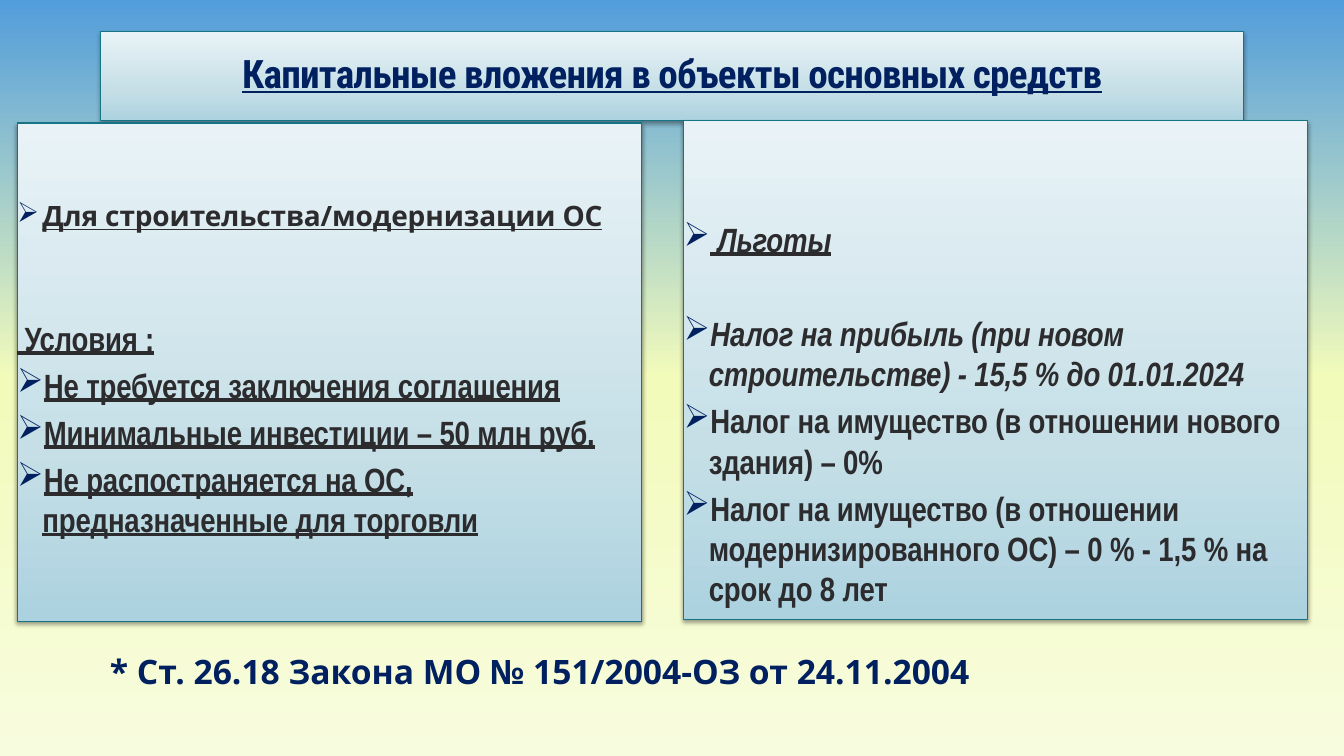
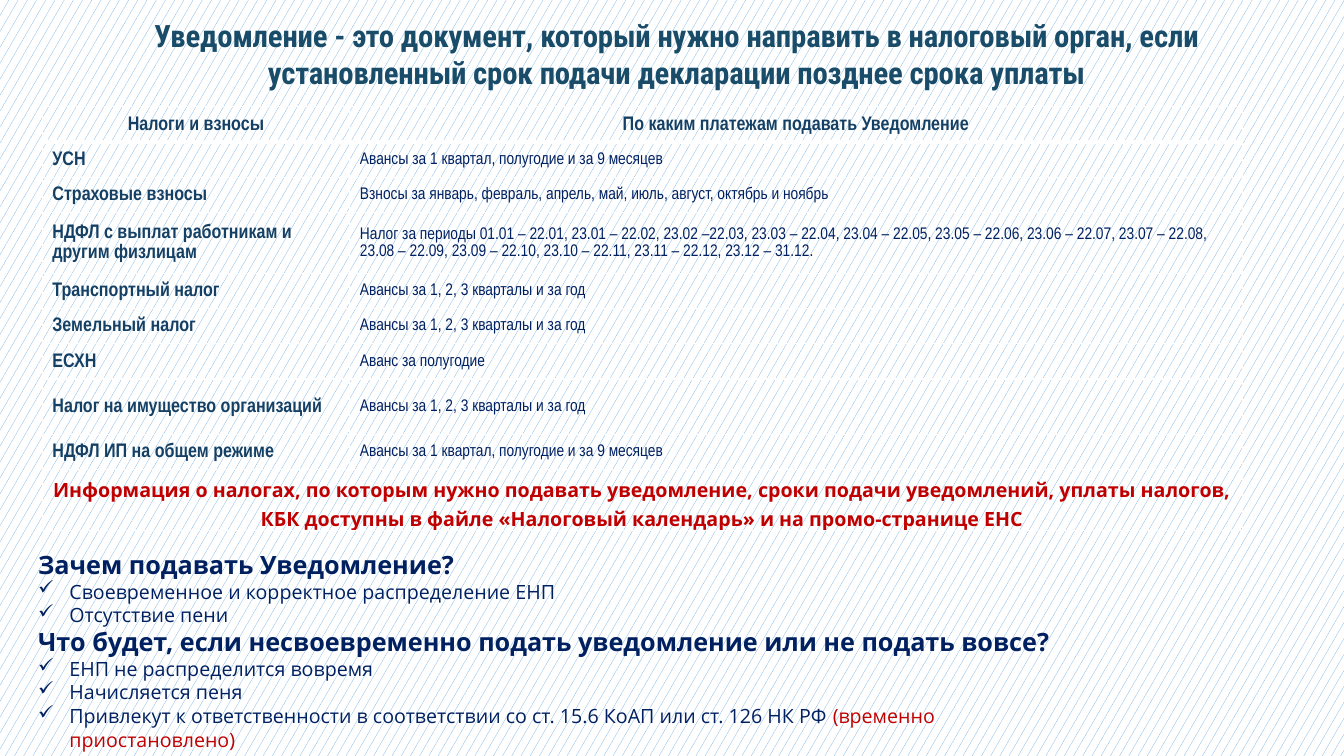
from dataclasses import dataclass, replace

import pptx
import pptx.dml.color
import pptx.enum.dml
import pptx.enum.shapes
import pptx.enum.text
import pptx.oxml.ns
import pptx.oxml.xmlchemy
import pptx.util
from pptx.util import Inches

NAVY, RED, CHARCOAL = "002060", "C00000", "2C2B2D"
TEAL, HEADING, LABEL, WHITE, SKY = "167485", "194C69", "154064", "FFFFFF", "529DDB"
NARROW, SANS, TITLE_FONT = "Arial Narrow", "Open Sans", "Roboto Condensed"
PANEL_STOPS = [(0, "ACD2DF"), (35, "C6DFE7"), (100, "E9F3F7")]
SKY_STOPS = [(0, SKY), (50, "F2FBBA"), (100, "F8FCDE")]
CENTER = pptx.enum.text.PP_ALIGN.CENTER
LEFT = pptx.enum.text.PP_ALIGN.LEFT
MIDDLE = pptx.enum.text.MSO_ANCHOR.MIDDLE
TOP = pptx.enum.text.MSO_ANCHOR.TOP


@dataclass(frozen=True)
class TextStyle:
    size: float
    font: str
    color: str
    bold: bool = False
    italic: bool = False
    underline: bool = False
    tracking: float = 0


@dataclass(frozen=True)
class Layout:
    """Paragraph settings: spacing in points, indent in inches."""
    align: int = LEFT
    before: float = 0
    line: float = 1
    bullet: str = ""
    indent: float = 0
    bullet_color: str = NAVY


PANEL_TITLE = TextStyle(28, TITLE_FONT, NAVY, True, underline=True, tracking=-0.5)
CONDITION = TextStyle(24, NARROW, CHARCOAL, True, underline=True, tracking=-0.1)
BENEFIT = replace(CONDITION, underline=False)
QUESTION = TextStyle(18, SANS, NAVY, True)
ANSWER = TextStyle(14, SANS, NAVY)
ROW_LABEL = TextStyle(14, NARROW, LABEL, True)
ROW_TEXT = TextStyle(12, NARROW, NAVY)
CALLOUT = TextStyle(14, SANS, RED, True)

ARROW_ITEM = Layout(before=4.8, bullet="➢", indent=0.25)
CHECK_ITEM = Layout(bullet="✓", indent=0.31)
CENTERED = Layout(CENTER)

QUARTERS = "Авансы за 1, 2, 3 кварталы и за год"
HALF_YEAR = "Авансы за 1 квартал, полугодие и за 9 месяцев"
PAYMENTS = [
    ("Налоги и взносы", "По каким платежам подавать Уведомление"),
    ("УСН", HALF_YEAR),
    ("Страховые взносы",
     "Взносы за январь, февраль, апрель, май, июль, август, октябрь и ноябрь"),
    ("НДФЛ с выплат работникам и другим физлицам",
     "Налог за периоды 01.01 – 22.01, 23.01 – 22.02, 23.02 –22.03, "
     "23.03 – 22.04, 23.04 – 22.05, 23.05 – 22.06, 23.06 – 22.07, "
     "23.07 – 22.08, 23.08 – 22.09, 23.09 – 22.10, 23.10 – 22.11, "
     "23.11 – 22.12, 23.12 – 31.12."),
    ("Транспортный налог", QUARTERS),
    ("Земельный налог", QUARTERS),
    ("ЕСХН", "Аванс за полугодие"),
    ("Налог на имущество организаций", QUARTERS),
    ("НДФЛ ИП на общем режиме", HALF_YEAR),
]
CALENDAR_NOTE = (
    "Информация о налогах, по которым нужно подавать уведомление, сроки подачи "
    "уведомлений, уплаты налогов, КБК доступны в файле «Налоговый календарь» "
    "и на промо-странице ЕНС")


def rgb(color):
    return pptx.dml.color.RGBColor.from_string(color)


def add_child(parent, tag, **attributes):
    child = parent.makeelement(pptx.oxml.ns.qn(tag), {})
    for name, value in attributes.items():
        child.set(name, str(value))
    parent.append(child)
    return child


def add_color(parent, color):
    return add_child(parent, "a:srgbClr", val=color)


def set_gradient(fill, owner, stops, angle):
    """Fill with any number of stops; owner is the XML element holding the fill."""
    fill.gradient()
    gradient = owner.find(".//" + pptx.oxml.ns.qn("a:gradFill"))
    for child in list(gradient):
        gradient.remove(child)
    stop_list = add_child(gradient, "a:gsLst")
    for position, color in stops:
        add_color(add_child(stop_list, "a:gs", pos=position * 1000), color)
    add_child(gradient, "a:lin", ang=angle * 60000, scaled=0)


def add_run(paragraph, text, style):
    run = paragraph.add_run()
    run.text = text
    font = run.font
    font.size, font.name = pptx.util.Pt(style.size), style.font
    font.bold, font.italic, font.underline = style.bold, style.italic, style.underline
    font.color.rgb = rgb(style.color)
    if style.tracking:
        run._r.get_or_add_rPr().set("spc", str(round(style.tracking * 100)))


def format_paragraph(paragraph, layout):
    paragraph.alignment = layout.align
    paragraph.space_before = pptx.util.Pt(layout.before)
    paragraph.line_spacing = layout.line
    if layout.bullet:
        properties = paragraph._p.get_or_add_pPr()
        properties.set("marL", str(Inches(layout.indent)))
        properties.set("indent", str(-Inches(layout.indent)))
        add_color(add_child(properties, "a:buClr"), layout.bullet_color)
        add_child(properties, "a:buChar", char=layout.bullet)


def write_text(frame, paragraphs):
    """Write paragraphs given as (layout, [(text, style), ...])."""
    for index, (layout, runs) in enumerate(paragraphs):
        paragraph = frame.add_paragraph() if index else frame.paragraphs[0]
        format_paragraph(paragraph, layout)
        for text, style in runs:
            add_run(paragraph, text, style)


def set_frame(frame, anchor, sides=0, top=0, bottom=0):
    frame.word_wrap = True
    frame.vertical_anchor = anchor
    frame.margin_left = frame.margin_right = Inches(sides)
    frame.margin_top, frame.margin_bottom = Inches(top), Inches(bottom)


def add_text(slide, box, paragraphs, anchor=TOP, sides=0.1, top=0.05):
    shape = slide.shapes.add_textbox(*map(Inches, box))
    set_frame(shape.text_frame, anchor, sides, top, top)
    write_text(shape.text_frame, paragraphs)


def add_panel(slide, box, paragraphs, anchor=TOP, top=0):
    """Add a gradient rectangle with a soft shadow."""
    shape = slide.shapes.add_shape(
        pptx.enum.shapes.MSO_SHAPE.RECTANGLE, *map(Inches, box))
    properties = shape._element.spPr
    set_gradient(shape.fill, properties, PANEL_STOPS, 270)
    shape.line.color.rgb = rgb(TEAL)
    shape.line.width = pptx.util.Pt(0.75)
    shape.shadow.inherit = False
    effects = properties.find(pptx.oxml.ns.qn("a:effectLst"))
    shadow = add_child(effects, "a:outerShdw", blurRad=pptx.util.Pt(3.1),
                       dist=pptx.util.Pt(1.6), dir=90 * 60000, rotWithShape=0)
    add_child(add_color(shadow, "000000"), "a:alpha", val=38000)
    set_frame(shape.text_frame, anchor, top=top)
    write_text(shape.text_frame, paragraphs)


def set_borders(cell, row):
    """White grid with a heavier rule under the header."""
    heavy = {(0, "B"), (1, "T")}
    properties = cell._tc.get_or_add_tcPr()
    for side in "LRTB":
        width = 3 if (row, side) in heavy else 1
        line = add_child(properties, "a:ln" + side, w=pptx.util.Pt(width))
        add_color(add_child(line, "a:solidFill"), WHITE)


def fill_cell(cell, text, style, align):
    cell.vertical_anchor = MIDDLE
    write_text(cell.text_frame, [(Layout(align, line=1.07), [(text, style)])])


def add_payments_table(slide):
    heights = [0.34, 0.34, 0.34, 0.58, 0.34, 0.34, 0.34, 0.55, 0.34, 0.58]
    widths = [3.05, 8.85]
    table = slide.shapes.add_table(
        len(heights), len(widths), Inches(0.42), Inches(1.06),
        Inches(sum(widths)), Inches(sum(heights))).table
    table.first_row = table.horz_banding = False
    for column, width in zip(table.columns, widths):
        column.width = Inches(width)
    for index, height in enumerate(heights):
        table.rows[index].height = Inches(height)
        for cell in table.rows[index].cells:
            set_borders(cell, index)
            cell.fill.background()
    for row, texts in enumerate(PAYMENTS):
        for column, text in enumerate(texts):
            style = ROW_TEXT if row and column else ROW_LABEL
            fill_cell(table.cell(row, column), text, style, LEFT if row else CENTER)
    last = len(heights) - 1
    table.cell(last, 0).merge(table.cell(last, 1))
    fill_cell(table.cell(last, 0), CALENDAR_NOTE, CALLOUT, CENTER)


def build_investment_slide(slide):
    set_gradient(slide.background.fill, slide._element, SKY_STOPS, 90)
    add_panel(slide, (1, 0.31, 11.33, 0.89), [
        (Layout(CENTER, line=0.86),
         [("Капитальные вложения в объекты основных средств", PANEL_TITLE)]),
    ], anchor=MIDDLE)

    conditions = [
        "Не требуется заключения соглашения",
        "Минимальные инвестиции – 50 млн руб.",
        "Не распостраняется на ОС, предназначенные для торговли",
    ]
    purpose = replace(CONDITION, size=20, font=SANS)
    add_panel(slide, (0.17, 1.22, 6.19, 4.95), [
        (replace(ARROW_ITEM, before=0),
         [("Для строительства/модернизации ОС", purpose)]),
        (Layout(before=61), [(" Условия :", CONDITION)]),
        *[(ARROW_ITEM, [(text, CONDITION)]) for text in conditions],
    ], top=0.75)

    benefits = [
        "Налог на имущество (в отношении нового здания) – 0%",
        "Налог на имущество (в отношении модернизированного ОС) – 0 % - 1,5 % "
        "на срок до 8 лет",
    ]
    add_panel(slide, (6.78, 1.2, 6.19, 4.95), [
        (replace(ARROW_ITEM, before=0),
         [(" Льготы", replace(CONDITION, italic=True))]),
        (replace(ARROW_ITEM, before=38.4),
         [("Налог на прибыль (при новом строительстве) - 15,5 % до 01.01.2024",
           replace(BENEFIT, italic=True))]),
        *[(ARROW_ITEM, [(text, BENEFIT)]) for text in benefits],
    ], top=0.97)

    add_text(slide, (-0.01, 6.41, 10.73, 0.5), [
        (CENTERED, [("* Ст. 26.18 Закона МО № 151/2004-ОЗ от 24.11.2004",
                     TextStyle(24, SANS, NAVY, True))]),
    ])


def build_notification_slide(slide):
    fill = slide.background.fill
    fill.patterned()
    fill.pattern = pptx.enum.dml.MSO_PATTERN.SMALL_CONFETTI
    fill.fore_color.rgb, fill.back_color.rgb = rgb(SKY), rgb(WHITE)
    add_text(slide, (1.39, 0.08, 10.64, 0.9), [
        (CENTERED,
         [("Уведомление - это документ, который нужно направить в налоговый орган, "
           "если установленный срок подачи декларации позднее срока уплаты",
           TextStyle(22, TITLE_FONT, HEADING, True, tracking=-0.1))]),
    ], anchor=MIDDLE, sides=0, top=0)
    add_payments_table(slide)

    sections = [
        ("Зачем подавать Уведомление?",
         ["Своевременное и корректное распределение ЕНП", "Отсутствие пени"]),
        ("Что будет, если несвоевременно подать уведомление или не подать вовсе?",
         ["ЕНП не распределится вовремя", "Начисляется пеня",
          "Привлекут к ответственности в соответствии со ст. 15.6 КоАП "
          "или ст. 126 НК РФ "]),
    ]
    paragraphs = []
    for question, answers in sections:
        paragraphs.append((Layout(), [(question, QUESTION)]))
        paragraphs += [(CHECK_ITEM, [(answer, ANSWER)]) for answer in answers]
    paragraphs[-1][1].append(("(временно приостановлено)", replace(ANSWER, color=RED)))
    add_text(slide, (0.28, 5.4, 10.71, 1.92), paragraphs)


def main():
    presentation = pptx.Presentation()
    presentation.slide_width, presentation.slide_height = Inches(13.33), Inches(7.5)
    blank = presentation.slide_layouts[6]
    for build in (build_investment_slide, build_notification_slide):
        build(presentation.slides.add_slide(blank))
    presentation.save("out.pptx")


if __name__ == "__main__":
    main()
